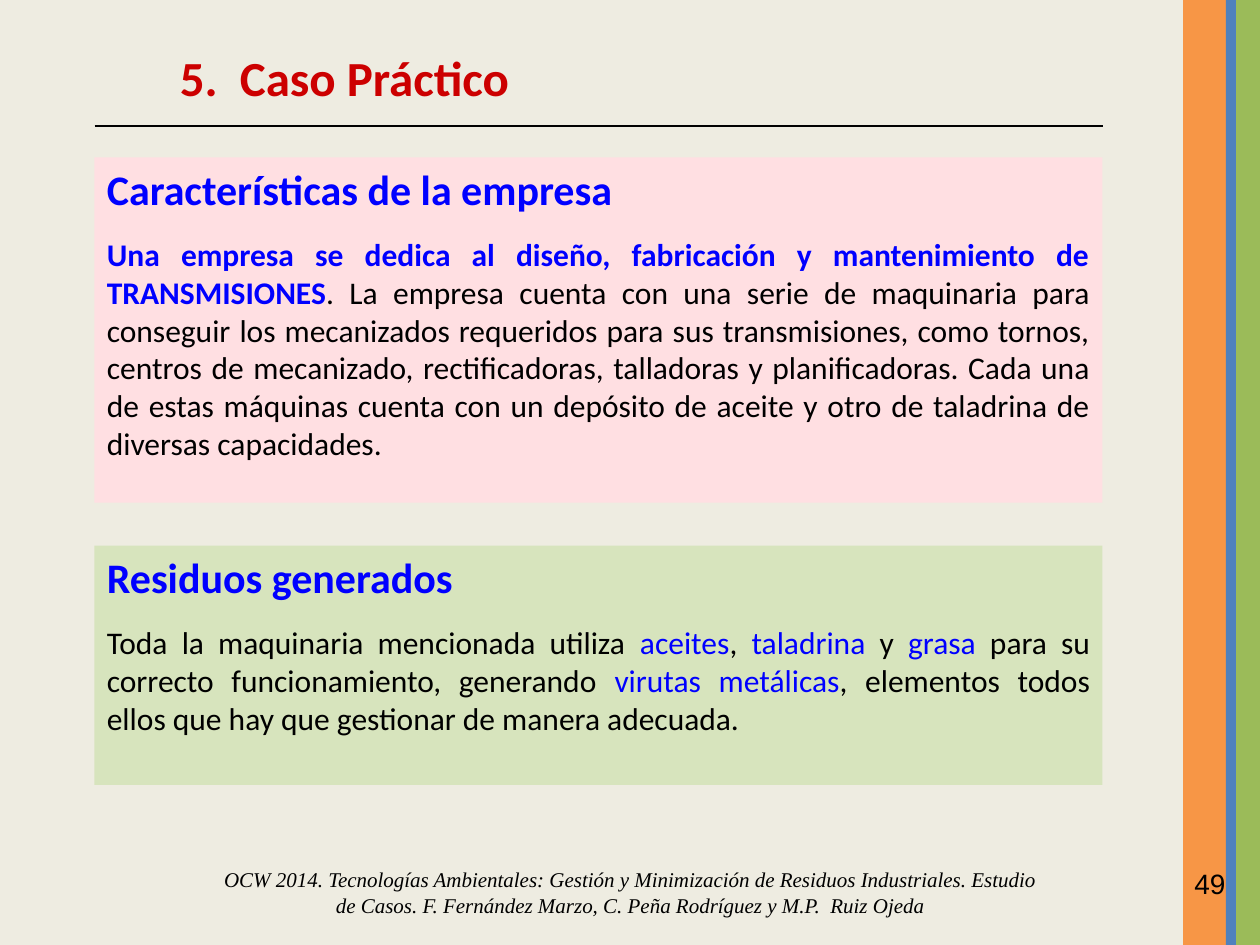
from lxml.etree import SubElement
from pptx import Presentation
from pptx.dml.color import RGBColor
from pptx.enum.shapes import MSO_CONNECTOR, MSO_SHAPE
from pptx.enum.text import MSO_ANCHOR, PP_ALIGN
from pptx.oxml.ns import qn
from pptx.util import Inches, Pt

THEME = {
    "background": "EEECE1",
    "orange": "F79646",
    "blue": "4F81BD",
    "green": "9BBB59",
    "pink_panel": "FFDFE2",
    "green_panel": "D7E4BD",
    "black": "000000",
    "title": {"name": "Calibri", "size": Pt(28), "bold": True, "color": "CC0000"},
    "heading": {"name": "Calibri", "size": Pt(24), "bold": True, "color": "0000FF"},
    "body": {"name": "Calibri", "size": Pt(18), "bold": False, "color": "000000"},
    "accent": {"name": "Calibri", "size": Pt(18), "bold": False, "color": "0000FF"},
    "strong": {"name": "Calibri", "size": Pt(18), "bold": True, "color": "0000FF"},
    "footer": {"name": "Times New Roman", "size": Pt(12), "italic": True, "color": "000000"},
    "number": {"name": "Arial", "size": Pt(16), "color": "000000"},
}


def add_block(shapes, box, color):
    shape = shapes.add_shape(MSO_SHAPE.RECTANGLE, *map(Inches, box))
    shape.shadow.inherit = False
    shape.fill.solid()
    shape.fill.fore_color.rgb = RGBColor.from_string(color)
    shape.line.fill.background()
    return shape


def write_paragraph(paragraph, runs, **layout):
    for attribute, value in layout.items():
        setattr(paragraph, attribute, value)
    for text, style in runs:
        run = paragraph.add_run()
        run.text = text
        for attribute, value in THEME[style].items():
            if attribute == "color":
                run.font.color.rgb = RGBColor.from_string(value)
            else:
                setattr(run.font, attribute, value)


presentation = Presentation()
presentation.slide_width = Inches(10)
presentation.slide_height = Inches(7.5)
slide = presentation.slides.add_slide(presentation.slide_layouts[6])
slide.background.fill.solid()
slide.background.fill.fore_color.rgb = RGBColor.from_string(THEME["background"])

for left, width, color in [(9.39, 0.35, "orange"), (9.81, 0.19, "green"), (9.73, 0.08, "blue")]:
    add_block(slide.shapes, (left, 0, width, 7.5), THEME[color])

footer = (
    "OCW 2014. Tecnologías Ambientales: Gestión y Minimización de Residuos Industriales. "
    "Estudio de Casos. F. Fernández Marzo, C. Peña Rodríguez y M.P.  Ruiz Ojeda"
)
labels = [
    ((9.38, 6.83, 0.62, 0.52), "49", "number", PP_ALIGN.LEFT, MSO_ANCHOR.TOP),
    ((1.67, 6.83, 6.67, 0.5), footer, "footer", PP_ALIGN.CENTER, MSO_ANCHOR.MIDDLE),
    ((1.33, 0.33, 4.67, 0.57), "5.  Caso Práctico", "title", PP_ALIGN.LEFT, MSO_ANCHOR.TOP),
]
for box, text, style, alignment, anchor in labels:
    frame = slide.shapes.add_textbox(*map(Inches, box)).text_frame
    frame.word_wrap = True
    frame.vertical_anchor = anchor
    write_paragraph(frame.paragraphs[0], [(text, style)], alignment=alignment)

company_text = [
    ("Una empresa se dedica al diseño, fabricación y mantenimiento de TRANSMISIONES", "strong"),
    (
        ". La empresa cuenta con una serie de maquinaria para conseguir los mecanizados "
        "requeridos para sus transmisiones, como tornos, centros de mecanizado, "
        "rectificadoras, talladoras y planificadoras. Cada una de estas máquinas cuenta "
        "con un depósito de aceite y otro de taladrina de diversas capacidades.",
        "body",
    ),
]
waste_text = [
    ("Toda la maquinaria mencionada utiliza ", "body"),
    ("aceites", "accent"),
    (", ", "body"),
    ("taladrina", "accent"),
    (" y ", "body"),
    ("grasa", "accent"),
    (" para su correcto funcionamiento, generando ", "body"),
    ("virutas metálicas", "accent"),
    (", elementos todos ellos que hay que gestionar de manera adecuada.", "body"),
]
panels = [
    (1.25, 2.74, "pink_panel", "Características de la empresa", company_text),
    (4.33, 1.9, "green_panel", "Residuos generados", waste_text),
]
for top, height, color, heading, runs in panels:
    panel = add_block(slide.shapes, (0.75, top, 8, height), THEME[color])
    frame = panel.text_frame
    frame.word_wrap = True
    frame.vertical_anchor = MSO_ANCHOR.TOP
    write_paragraph(frame.paragraphs[0], [(heading, "heading")], alignment=PP_ALIGN.LEFT)
    write_paragraph(
        frame.add_paragraph(), runs, alignment=PP_ALIGN.JUSTIFY, space_before=Pt(12)
    )

title_rule = slide.shapes.add_connector(
    MSO_CONNECTOR.STRAIGHT, Inches(0.75), Inches(1), Inches(8.75), Inches(1)
)
title_rule.line.color.rgb = RGBColor.from_string(THEME["black"])
title_rule.line.width = Pt(0.75)
SubElement(title_rule._element.spPr, qn("a:effectLst"))

presentation.save("out.pptx")
